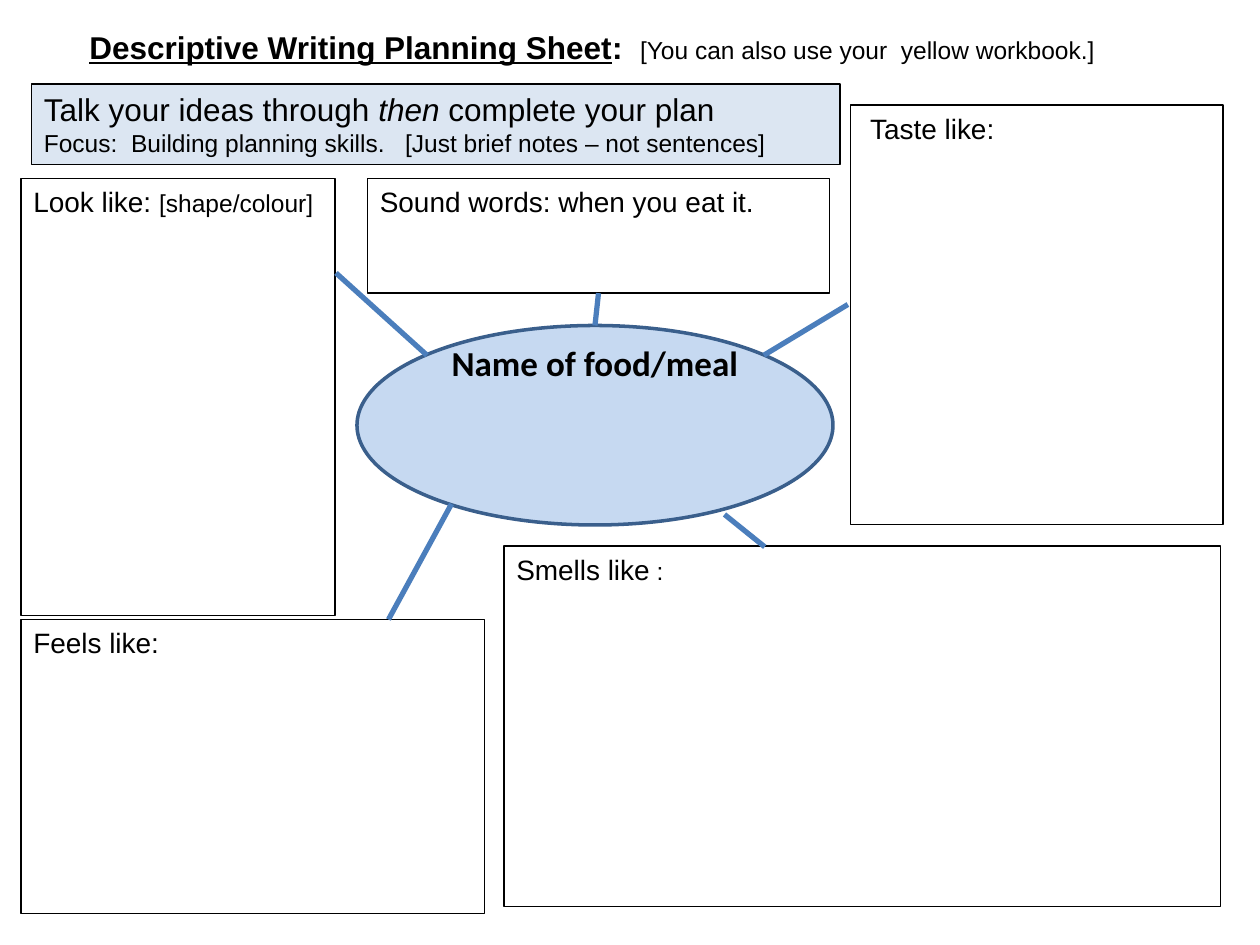
from dataclasses import dataclass

from lxml.etree import SubElement
from pptx import Presentation
from pptx.dml.color import RGBColor as Rgb
from pptx.enum.shapes import MSO_CONNECTOR as Link, MSO_SHAPE as Kind
from pptx.enum.text import MSO_ANCHOR as Anchor, MSO_AUTO_SIZE as Fit, PP_ALIGN as Align
from pptx.oxml.ns import qn
from pptx.util import Pt


@dataclass(frozen=True)
class Theme:
    ink: Rgb = Rgb(0, 0, 0)
    paper: Rgb = Rgb(0xFF, 0xFF, 0xFF)
    pale: Rgb = Rgb(0xDC, 0xE6, 0xF2)
    sky: Rgb = Rgb(0xC6, 0xD9, 0xF1)
    edge: Rgb = Rgb(0x3A, 0x5F, 0x8C)
    ray: Rgb = Rgb(0x4B, 0x7E, 0xBC)
    font: str = "Arial"
    hub_font: str = "Calibri"
    hub: int = 20
    head: int = 18
    label: int = 16
    note: int = 14


@dataclass(frozen=True)
class Run:
    text: str
    size: int
    bold: bool = False
    italic: bool = False
    under: bool = False
    font: str = Theme.font


@dataclass(frozen=True)
class Box:
    left: float
    top: float
    width: float
    height: float
    paras: list[list[Run]]
    fill: Rgb = Theme.paper
    line: Rgb = Theme.ink
    weight: float = 0.75
    kind: Kind = Kind.RECTANGLE


@dataclass(frozen=True)
class Ray:
    x1: float
    y1: float
    x2: float
    y2: float


T = Theme()


def write(frame, paras: list[list[Run]], *, align=Align.LEFT,
          left: float = 7.2, top: float = 3.6) -> None:
    """Fill a text frame with formatted runs."""
    frame.word_wrap = True
    frame.auto_size = Fit.NONE
    frame.vertical_anchor = Anchor.TOP
    frame.margin_left, frame.margin_right = Pt(left), Pt(7.2)
    frame.margin_top, frame.margin_bottom = Pt(top), Pt(3.6)
    for i, runs in enumerate(paras):
        para = frame.add_paragraph() if i else frame.paragraphs[0]
        para.alignment = align
        for item in runs:
            run = para.add_run()
            run.text = item.text
            font = run.font
            font.name, font.size = item.font, Pt(item.size)
            font.bold, font.italic, font.underline = item.bold, item.italic, item.under
            font.color.rgb = T.ink


def draw_box(slide, box: Box, **style):
    shape = slide.shapes.add_shape(
        box.kind, Pt(box.left), Pt(box.top), Pt(box.width), Pt(box.height))
    shape.shadow.inherit = False
    shape.fill.solid()
    shape.fill.fore_color.rgb = box.fill
    shape.line.color.rgb = box.line
    shape.line.width = Pt(box.weight)
    write(shape.text_frame, box.paras, **style)
    return shape


def draw_ray(slide, ray: Ray):
    line = slide.shapes.add_connector(
        Link.STRAIGHT, Pt(ray.x1), Pt(ray.y1), Pt(ray.x2), Pt(ray.y2))
    line.line.color.rgb = T.ray
    line.line.width = Pt(3)
    SubElement(line._element.spPr, qn("a:effectLst"))
    return line


# Content
TITLE = [[Run("Descriptive Writing Planning Sheet", T.head, bold=True, under=True),
          Run(":  ", T.head, bold=True),
          Run("[You can also use your  yellow workbook.]", T.note)]]
FOCUS = Box(18, 48, 462, 46, [
    [Run("Talk your ideas through ", T.head), Run("then", T.head, italic=True),
     Run(" complete your plan", T.head)],
    [Run("Focus:  Building planning skills.   [Just brief notes – not sentences]", T.note)],
], fill=T.pale)
HUB = Box(204, 186, 272, 114,
          [[Run("Name of food/meal", T.hub, bold=True, font=T.hub_font)]],
          fill=T.sky, line=T.edge, weight=2, kind=Kind.OVAL)
SMELL = Box(288, 312, 409.5, 206, [[Run("Smells like", T.label), Run(" :", T.note)]])
TASTE = Box(486, 60, 213, 239.8, [[Run("Taste like:", T.label)]])
FEEL = Box(12, 354, 264.8, 168, [[Run("Feels like:", T.label)]])
SOUND = Box(210, 102, 264, 65.5, [[Run("Sound words: when you eat it.", T.label)]])
LOOK = Box(12, 102, 179.5, 249.6,
           [[Run("Look like: ", T.label), Run("[shape/colour]", T.note)]])
RAYS = [Ray(258, 288, 222, 354), Ray(484.5, 174, 436.5, 203),
        Ray(437, 312.5, 414, 294), Ray(244, 203, 192, 156)]


def main() -> None:
    deck = Presentation()
    deck.slide_width, deck.slide_height = Pt(720), Pt(540)
    slide = deck.slides.add_slide(deck.slide_layouts[5])

    # Title
    title = slide.shapes.title
    title.left, title.top, title.width, title.height = Pt(24), Pt(12.5), Pt(630), Pt(29)
    write(title.text_frame, TITLE, left=27)

    # Focus banner, and the food name set high in the oval
    draw_box(slide, FOCUS)
    hub = draw_box(slide, HUB, align=Align.CENTER, top=-7.5)

    # Sense boxes
    for box in (SMELL, FEEL, LOOK):
        draw_box(slide, box)
    draw_box(slide, TASTE, left=11.3)
    sound = draw_box(slide, SOUND)

    # Rays from the food to each sense
    for ray in RAYS:
        draw_ray(slide, ray)
    link = draw_ray(slide, Ray(342, 167.5, 340, 186))
    link.begin_connect(sound, 2)
    link.end_connect(hub, 0)

    deck.save("out.pptx")


if __name__ == "__main__":
    main()
